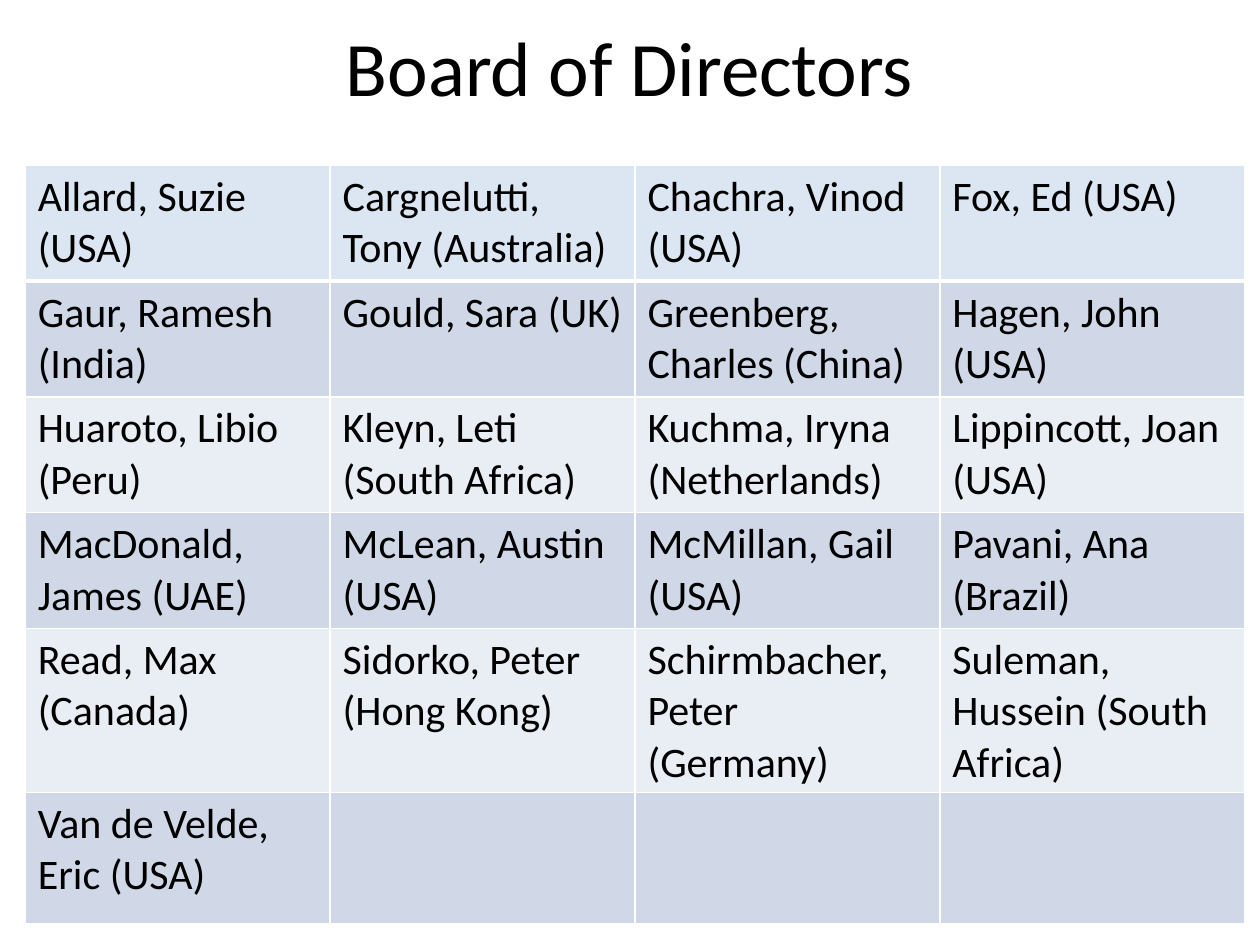
import lxml.etree
import pptx
import pptx.dml.color
import pptx.enum.text
import pptx.oxml.ns
import pptx.util

HEADING = "Board of Directors"
DIRECTORS = [
    ["Allard, Suzie (USA)", "Cargnelutti, Tony (Australia)",
     "Chachra, Vinod (USA)", "Fox, Ed (USA)"],
    ["Gaur, Ramesh (India)", "Gould, Sara (UK)",
     "Greenberg, Charles (China)", "Hagen, John (USA)"],
    ["Huaroto, Libio (Peru)", "Kleyn, Leti\v(South Africa)",
     "Kuchma, Iryna (Netherlands)", "Lippincott, Joan (USA)"],
    ["MacDonald, James (UAE)", "McLean, Austin (USA)",
     "McMillan, Gail (USA)", "Pavani, Ana (Brazil)"],
    ["Read, Max (Canada)", "Sidorko, Peter (Hong Kong)",
     "Schirmbacher, Peter (Germany)", "Suleman, Hussein (South Africa)"],
    ["Van de Velde, Eric (USA)", "", "", ""],
]
THEME = {
    "font": "Calibri",
    "text": "000000",
    "heading_size": 44,
    "name_size": 24,
    "first_row": "DCE6F2",
    "bands": ["E9EDF4", "D0D8E8"],
    "border": "FFFFFF",
    "thin": 1,
    "thick": 3,
}
SLIDE_SIZE = (10, 7.5)
HEADING_BOX = (0.5, 0.05, 9, 0.95)
GRID_LEFT, GRID_TOP, GRID_WIDTH = 0.2, 1.31, 9.68
ROW_HEIGHTS = [0.92] * 4 + [1.27, 1.04]


def inches(lengths):
    return [pptx.util.Inches(length) for length in lengths]


def style_text(frame, size):
    font_format = {"name": THEME["font"], "size": pptx.util.Pt(size), "bold": False}
    for paragraph in frame.paragraphs:
        for run in paragraph.runs:
            for attribute, value in font_format.items():
                setattr(run.font, attribute, value)
            run.font.color.rgb = pptx.dml.color.RGBColor.from_string(THEME["text"])


def add_borders(cell, widths):
    """Draw the left, right, top and bottom borders; call before filling the cell."""
    qn = pptx.oxml.ns.qn
    properties = cell._tc.get_or_add_tcPr()
    for side, width in zip("LRTB", widths):
        line = lxml.etree.SubElement(
            properties, qn(f"a:ln{side}"), w=str(pptx.util.Pt(width)))
        paint = lxml.etree.SubElement(line, qn("a:solidFill"))
        lxml.etree.SubElement(paint, qn("a:srgbClr"), val=THEME["border"])


def add_heading(slide):
    frame = slide.shapes.add_textbox(*inches(HEADING_BOX)).text_frame
    frame_format = {
        "word_wrap": True,
        "vertical_anchor": pptx.enum.text.MSO_ANCHOR.MIDDLE,
        "text": HEADING,
    }
    for attribute, value in frame_format.items():
        setattr(frame, attribute, value)
    frame.paragraphs[0].alignment = pptx.enum.text.PP_ALIGN.CENTER
    style_text(frame, THEME["heading_size"])


def add_directors(slide):
    columns = len(DIRECTORS[0])
    box = inches((GRID_LEFT, GRID_TOP, GRID_WIDTH, sum(ROW_HEIGHTS)))
    grid = slide.shapes.add_table(len(DIRECTORS), columns, *box).table
    grid.first_row = grid.horz_banding = False
    for column in grid.columns:
        column.width = pptx.util.Inches(GRID_WIDTH / columns)

    thin, thick = THEME["thin"], THEME["thick"]
    for index, (names, height) in enumerate(zip(DIRECTORS, ROW_HEIGHTS)):
        row = grid.rows[index]
        row.height = pptx.util.Inches(height)
        band = THEME["bands"][index % 2] if index else THEME["first_row"]
        top = thick if index == 1 else thin
        bottom = thick if index == 0 else thin
        for cell, name in zip(row.cells, names):
            cell.text = name
            style_text(cell.text_frame, THEME["name_size"])
            add_borders(cell, (thin, thin, top, bottom))
            cell.fill.solid()
            cell.fill.fore_color.rgb = pptx.dml.color.RGBColor.from_string(band)


def main():
    deck = pptx.Presentation()
    deck.slide_width, deck.slide_height = inches(SLIDE_SIZE)
    slide = deck.slides.add_slide(deck.slide_layouts[6])
    add_heading(slide)
    add_directors(slide)
    deck.save("out.pptx")


if __name__ == "__main__":
    main()
